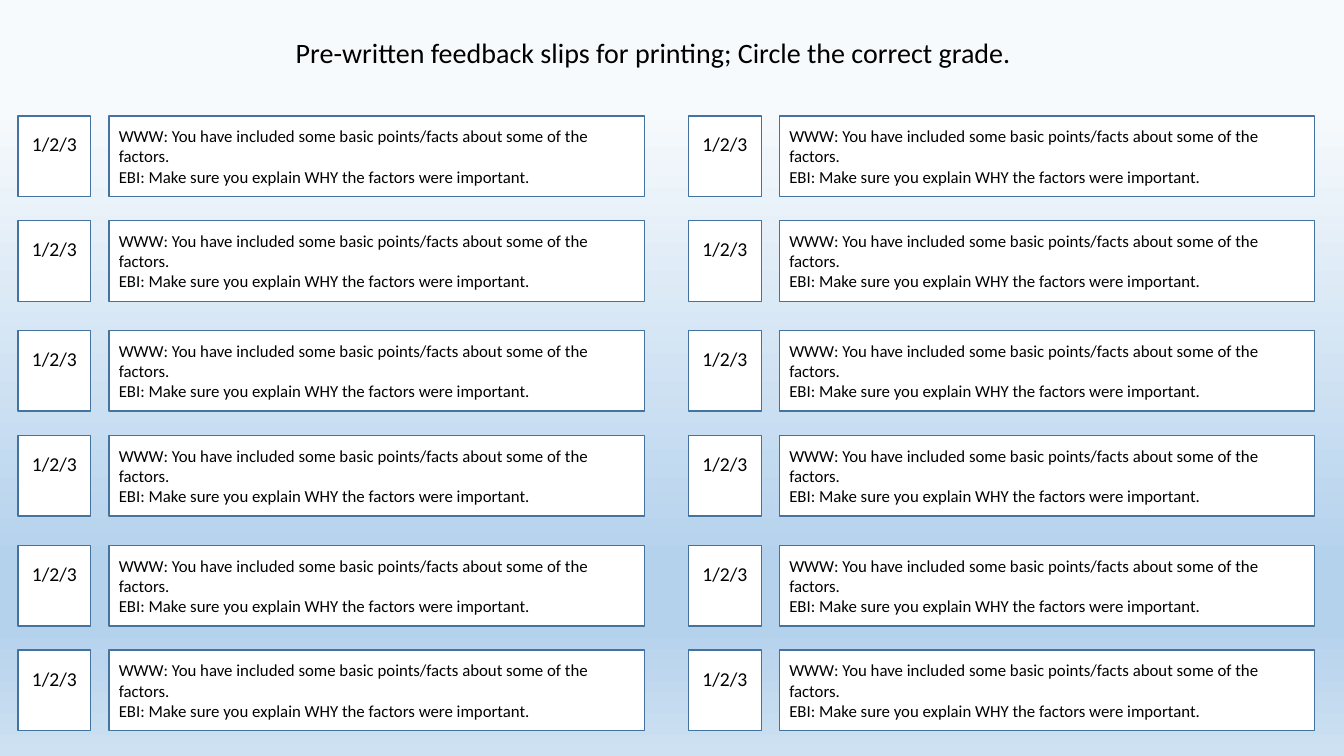
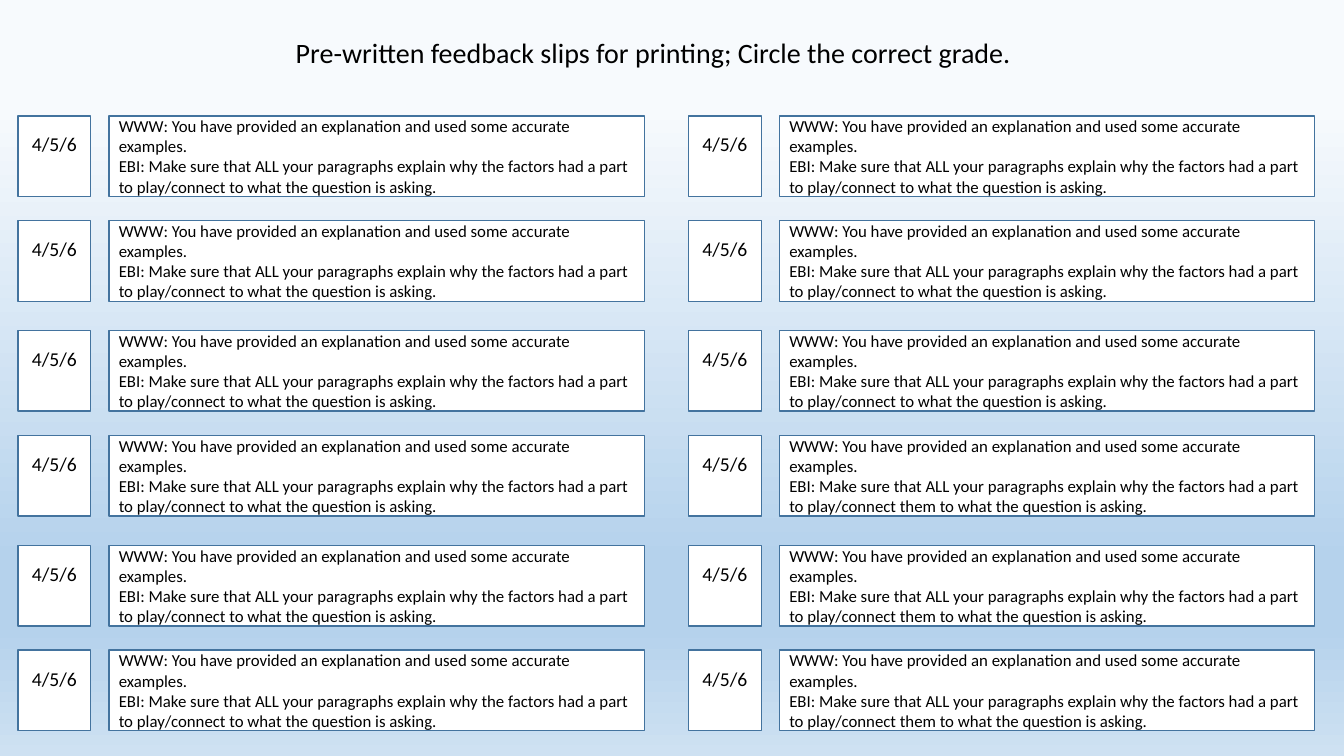
"""Build two slides of pre-written feedback slips with grades to circle."""

import dataclasses
import itertools

import lxml.etree
import pptx
import pptx.dml.color
import pptx.enum.shapes
import pptx.enum.text
import pptx.oxml.ns
import pptx.presentation
import pptx.shapes.autoshape
import pptx.slide
import pptx.text.text
import pptx.util

Inches = pptx.util.Inches
Align = pptx.enum.text.PP_ALIGN
Anchor = pptx.enum.text.MSO_ANCHOR


@dataclasses.dataclass(frozen=True)
class Theme:
    font: str = "Calibri"
    text: str = "000000"
    slip_fill: str = "FFFFFF"
    slip_line: str = "43739E"
    line_width: float = 1
    title_size: int = 20
    grade_size: int = 14
    comment_size: int = 12
    backdrop: tuple[tuple[int, str], ...] = (
        (14, "F7FAFD"), (74, "B5D2EC"), (83, "B5D2EC"), (100, "CEE1F2"),
    )


@dataclasses.dataclass(frozen=True)
class SlipGrid:
    rows: int = 6
    columns: int = 2
    left: float = 0.18
    top: float = 1.15
    column_pitch: float = 6.65
    row_pitch: float = 1.04
    pair_pitch: float = 2.13
    height: float = 0.8
    grade_width: float = 0.72
    comment_offset: float = 0.9
    comment_width: float = 5.31


@dataclasses.dataclass(frozen=True)
class Feedback:
    grades: str
    strength: str
    target: str
    reworded_target: str = ""
    reworded_cells: frozenset[tuple[int, int]] = frozenset()

    def comment(self, row: int, column: int) -> tuple[str, str]:
        reworded = (row, column) in self.reworded_cells
        return self.strength, self.reworded_target if reworded else self.target


THEME = Theme()
GRID = SlipGrid()
TITLE = "Pre-written feedback slips for printing; Circle the correct grade."
FEEDBACK = (
    Feedback(
        "1/2/3",
        "WWW: You have included some basic points/facts about some of the factors.",
        "EBI: Make sure you explain WHY the factors were important.",
    ),
    Feedback(
        "4/5/6",
        "WWW: You have provided an explanation and used some accurate examples.",
        "EBI: Make sure that ALL your paragraphs explain why the factors had a part "
        "to play/connect to what the question is asking.",
        "EBI: Make sure that ALL your paragraphs explain why the factors had a part "
        "to play/connect them to what the question is asking.",
        frozenset({(3, 1), (4, 1), (5, 1)}),
    ),
)


def rgb(value: str) -> pptx.dml.color.RGBColor:
    return pptx.dml.color.RGBColor.from_string(value)


def set_backdrop(master: pptx.slide.SlideMaster) -> None:
    fill = master.background.fill
    fill.gradient()
    fill.gradient_angle = 270
    stops = master.element.xpath("./p:cSld/p:bg//a:gsLst")[0]
    for stop in list(stops):
        stops.remove(stop)
    qn = pptx.oxml.ns.qn
    for percent, color in THEME.backdrop:
        stop = lxml.etree.SubElement(stops, qn("a:gs"), pos=str(percent * 1000))
        lxml.etree.SubElement(stop, qn("a:srgbClr"), val=color)


def write(
    frame: pptx.text.text.TextFrame, lines: tuple[str, ...], size: int, alignment: Align
) -> None:
    for index, line in enumerate(lines):
        paragraph = frame.add_paragraph() if index else frame.paragraphs[0]
        paragraph.alignment = alignment
        run = paragraph.add_run()
        run.text = line
        run.font.name = THEME.font
        run.font.size = pptx.util.Pt(size)
        run.font.color.rgb = rgb(THEME.text)


def add_title(slide: pptx.slide.Slide) -> None:
    title = slide.shapes.title
    title.left, title.top = Inches(1.48), Inches(0.05)
    title.width, title.height = Inches(10), Inches(0.69)
    frame = title.text_frame
    frame.auto_size = pptx.enum.text.MSO_AUTO_SIZE.NONE
    frame.vertical_anchor = Anchor.BOTTOM
    write(frame, (TITLE,), THEME.title_size, Align.CENTER)
    frame.paragraphs[0].line_spacing = 0.9


def add_box(
    slide: pptx.slide.Slide, left: float, top: float, width: float
) -> pptx.shapes.autoshape.Shape:
    shape = slide.shapes.add_shape(
        pptx.enum.shapes.MSO_SHAPE.RECTANGLE,
        Inches(left), Inches(top), Inches(width), Inches(GRID.height),
    )
    shape.shadow.inherit = False
    shape.fill.solid()
    shape.fill.fore_color.rgb = rgb(THEME.slip_fill)
    shape.line.color.rgb = rgb(THEME.slip_line)
    shape.line.width = pptx.util.Pt(THEME.line_width)
    shape.text_frame.word_wrap = True
    shape.text_frame.vertical_anchor = Anchor.MIDDLE
    return shape


def add_slip(slide: pptx.slide.Slide, feedback: Feedback, row: int, column: int) -> None:
    pair, within_pair = divmod(row, 2)
    left = GRID.left + column * GRID.column_pitch
    top = GRID.top + pair * GRID.pair_pitch + within_pair * GRID.row_pitch
    grade = add_box(slide, left, top, GRID.grade_width).text_frame
    grade.margin_bottom = Inches(0.29)
    write(grade, (feedback.grades,), THEME.grade_size, Align.CENTER)
    comment = add_box(slide, left + GRID.comment_offset, top, GRID.comment_width)
    lines = feedback.comment(row, column)
    write(comment.text_frame, lines, THEME.comment_size, Align.LEFT)


def add_feedback_slide(
    presentation: pptx.presentation.Presentation, feedback: Feedback
) -> None:
    slide = presentation.slides.add_slide(presentation.slide_layouts[5])
    add_title(slide)
    for column, row in itertools.product(range(GRID.columns), range(GRID.rows)):
        add_slip(slide, feedback, row, column)


def main() -> None:
    presentation = pptx.Presentation()
    presentation.slide_width = Inches(13.33)
    presentation.slide_height = Inches(7.5)
    set_backdrop(presentation.slide_master)
    for feedback in FEEDBACK:
        add_feedback_slide(presentation, feedback)
    presentation.save("out.pptx")


if __name__ == "__main__":
    main()
